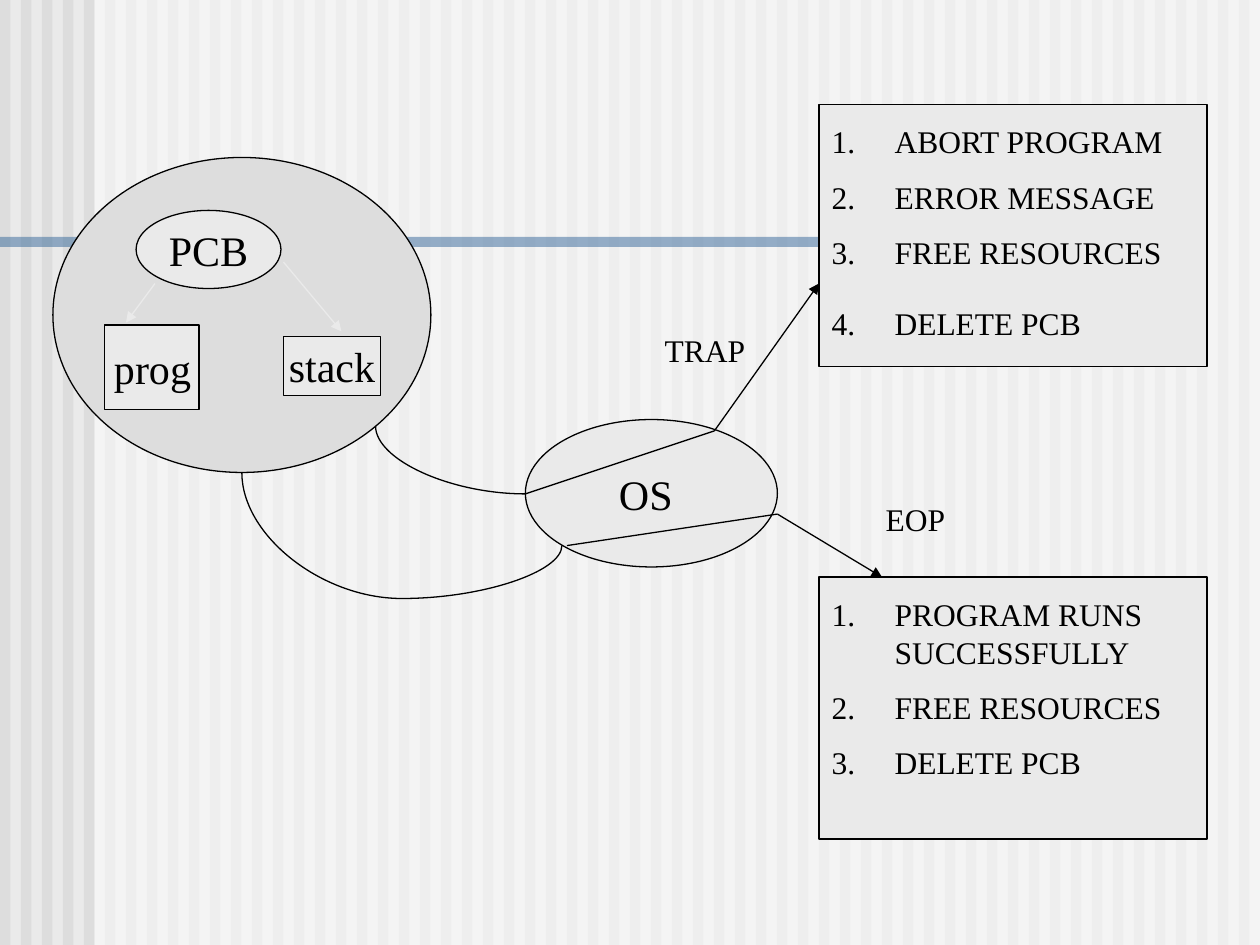
from dataclasses import dataclass

from lxml import etree
from pptx import Presentation
from pptx import util as u
from pptx.dml.color import RGBColor
from pptx.enum import shapes, text
from pptx.oxml.ns import qn


@dataclass(frozen=True)
class Theme:
    font: str = "Times New Roman"
    ink: str = "000000"
    panel: str = "EAEAEA"
    shade: str = "DDDDDD"
    white: str = "FFFFFF"
    accent: str = "336699"
    node_size: int = 24
    label_size: int = 18
    line_width: float = 0.75
    item_gap: int = 10


RECT = shapes.MSO_SHAPE.RECTANGLE
OVAL = shapes.MSO_SHAPE.OVAL


class Diagram:
    """Holds the style and the current slide."""

    def __init__(self, slide, theme):
        self.slide = slide
        self.theme = theme
        slide.background.fill.solid()
        slide.background.fill.fore_color.rgb = RGBColor.from_string(theme.panel)

    def style_text(self, paragraph, size, align):
        paragraph.alignment = align
        paragraph.space_before = u.Pt(0)
        for run in paragraph.runs:
            run.font.name = self.theme.font
            run.font.size = u.Pt(size)
            run.font.color.rgb = RGBColor.from_string(self.theme.ink)

    def block(self, left, top, width, height, color, alpha=None, kind=RECT):
        """Filled shape without an outline."""
        shape = self.slide.shapes.add_shape(
            kind, u.Inches(left), u.Inches(top), u.Inches(width), u.Inches(height))
        shape.shadow.inherit = False
        shape.fill.solid()
        shape.fill.fore_color.rgb = RGBColor.from_string(color)
        shape.line.fill.background()
        if alpha is not None:
            rgb = shape._element.spPr.find(f".//{qn('a:srgbClr')}")
            etree.SubElement(rgb, qn("a:alpha"), val=str(alpha * 1000))
        return shape

    def node(self, kind, left, top, width, height, color=None, label=None):
        """Outlined shape with an optional centred label."""
        shape = self.block(left, top, width, height, color or self.theme.panel, kind=kind)
        shape.line.color.rgb = RGBColor.from_string(self.theme.ink)
        shape.line.width = u.Pt(self.theme.line_width)
        if label:
            frame = shape.text_frame
            frame.text = label
            frame.word_wrap = False
            frame.vertical_anchor = text.MSO_ANCHOR.MIDDLE
            self.style_text(frame.paragraphs[0], self.theme.node_size, text.PP_ALIGN.CENTER)

    def label(self, words, left, top, width, height, size):
        box = self.slide.shapes.add_textbox(
            u.Inches(left), u.Inches(top), u.Inches(width), u.Inches(height))
        box.text_frame.word_wrap = True
        box.text_frame.text = words
        self.style_text(box.text_frame.paragraphs[0], size, text.PP_ALIGN.CENTER)

    def connector(self, kind, start, end, color=None):
        link = self.slide.shapes.add_connector(kind, *map(u.Inches, (*start, *end)))
        link.line.color.rgb = RGBColor.from_string(color or self.theme.ink)
        link.line.width = u.Pt(self.theme.line_width)
        etree.SubElement(link._element.spPr, qn("a:effectLst"))
        return link

    def line(self, start, end, color=None, arrow=False):
        link = self.connector(shapes.MSO_CONNECTOR.STRAIGHT, start, end, color)
        if arrow:
            outline = link._element.spPr.find(qn("a:ln"))
            etree.SubElement(outline, qn("a:tailEnd"), type="triangle")

    def curve(self, start, end, preset, bend=None):
        """Curve that leaves its start downwards: a quarter-turned, flipped connector."""
        (x1, y1), (x2, y2) = start, end
        mid_x, mid_y = (x1 + x2) / 2, (y1 + y2) / 2
        half_w, half_h = (y2 - y1) / 2, (x2 - x1) / 2
        link = self.connector(shapes.MSO_CONNECTOR.CURVE,
                              (mid_x - half_w, mid_y - half_h),
                              (mid_x + half_w, mid_y + half_h))
        xfrm = link._element.spPr.find(qn("a:xfrm"))
        xfrm.set("rot", str(270 * 60000))
        xfrm.set("flipH", "1")
        geometry = link._element.spPr.find(qn("a:prstGeom"))
        geometry.set("prst", preset)
        if bend is not None:
            guides = geometry.find(qn("a:avLst"))
            etree.SubElement(guides, qn("a:gd"), name="adj1", fmla=f"val {bend}")

    def numbered_list(self, placeholder, items, left, top, width, height, last_gap):
        """Numbered steps in a body placeholder, brought in front of their panel."""
        placeholder.left, placeholder.top = u.Inches(left), u.Inches(top)
        placeholder.width, placeholder.height = u.Inches(width), u.Inches(height)
        self.slide.shapes._spTree.append(placeholder._element)
        frame = placeholder.text_frame
        frame.text = "\n".join(items)
        frame.word_wrap = True
        frame.auto_size = text.MSO_AUTO_SIZE.NONE
        frame.vertical_anchor = text.MSO_ANCHOR.TOP
        for paragraph in frame.paragraphs:
            props = paragraph._p.get_or_add_pPr()
            props.set("marL", str(u.Inches(0.5)))
            props.set("indent", str(-u.Inches(0.5)))
            etree.SubElement(props, qn("a:buAutoNum"), type="arabicPeriod")
            self.style_text(paragraph, self.theme.label_size, text.PP_ALIGN.LEFT)
        for paragraph in frame.paragraphs[1:]:
            paragraph.space_before = u.Pt(self.theme.item_gap)
        frame.paragraphs[-1].space_before = u.Pt(last_gap)


def main():
    deck = Presentation()
    deck.slide_width, deck.slide_height = u.Inches(10), u.Inches(7.5)
    slide = deck.slides.add_slide(deck.slide_layouts[3])
    title, trap_steps, eop_steps = slide.placeholders
    title._element.getparent().remove(title._element)
    theme = Theme()
    diagram = Diagram(slide, theme)

    # Striped backdrop, pale veil and accent bar
    pitch = 1 / 6
    for i in range(60):
        diagram.block(i * pitch, 0, pitch / 2, 7.5, theme.shade)
    diagram.block(0.75, 0, 9.25, 7.5, theme.white, alpha=50)
    diagram.block(0, 1.88, 7.6, 0.08, theme.accent, alpha=50)

    # Operating system and process
    diagram.node(OVAL, 4.17, 3.33, 2, 1.17)
    diagram.label("OS", 4.75, 3.67, 0.75, 0.5, theme.node_size)
    diagram.node(OVAL, 0.42, 1.25, 3, 2.5, theme.shade)
    diagram.node(OVAL, 1.08, 1.67, 1.15, 0.62, label="PCB")
    diagram.node(RECT, 0.83, 2.58, 0.75, 0.67)
    diagram.label("prog", 0.75, 2.67, 0.92, 0.5, theme.node_size)
    diagram.node(RECT, 2.25, 2.67, 0.77, 0.47, label="stack")
    diagram.line((1.23, 2.25), (1, 2.56), theme.panel, arrow=True)
    diagram.line((2.25, 2.08), (2.71, 2.63), theme.panel, arrow=True)

    # Outcome panels with their steps
    outcomes = [
        (trap_steps, 0.83, 1.9, 19,
         ["ABORT PROGRAM", "ERROR MESSAGE", "FREE RESOURCES", "DELETE PCB"]),
        (eop_steps, 4.58, 2.2, theme.item_gap,
         ["PROGRAM RUNS SUCCESSFULLY", "FREE RESOURCES", "DELETE PCB"]),
    ]
    for steps, top, height, last_gap, items in outcomes:
        diagram.node(RECT, 6.5, top, 3.08, 2.08)
        diagram.numbered_list(steps, items, 6.5, top + 0.09, 3.08, height, last_gap)

    # Trap route
    diagram.curve((2.98, 3.38), (4.17, 3.92), "curvedConnector2")
    diagram.line((4.17, 3.92), (5.67, 3.42))
    diagram.line((5.67, 3.42), (6.5, 2.25), arrow=True)
    diagram.label("TRAP", 4.97, 2.58, 1.25, 0.4, theme.label_size)

    # End-of-program route
    diagram.curve((1.92, 3.75), (4.46, 4.33), "curvedConnector3", bend=172500)
    diagram.line((4.5, 4.33), (6.17, 4.08))
    diagram.line((6.17, 4.08), (7, 4.58), arrow=True)
    diagram.label("EOP", 6.64, 3.92, 1.25, 0.4, theme.label_size)

    deck.save("out.pptx")


if __name__ == "__main__":
    main()
